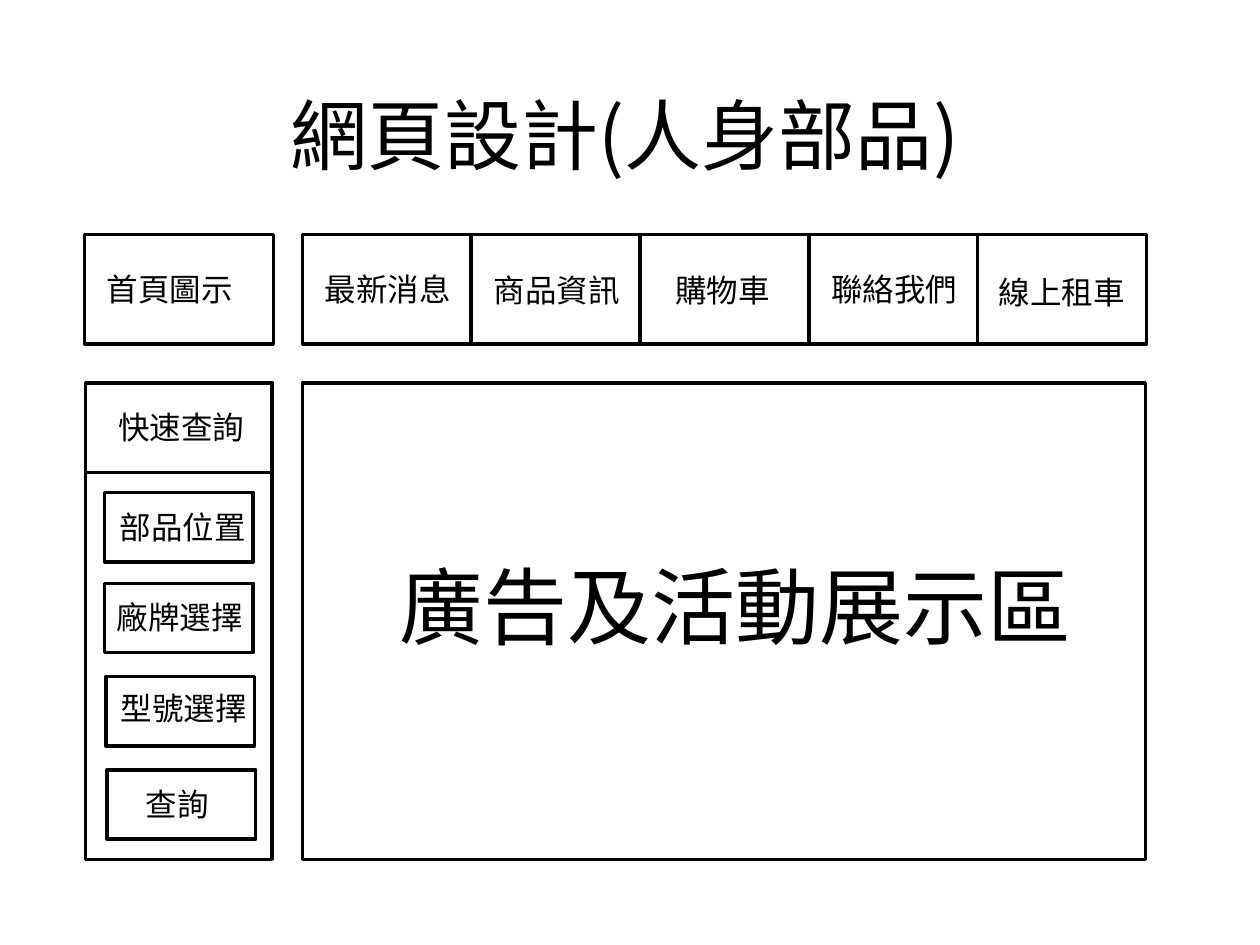
from dataclasses import dataclass

from pptx import Presentation
from pptx import util as u
from pptx.dml.color import RGBColor
from pptx.enum import shapes, text
from pptx.oxml import ns
from lxml import etree


@dataclass(frozen=True)
class Theme:
    """Colours, font and type sizes of the wireframe."""
    ink: RGBColor = RGBColor(0, 0, 0)
    paper: RGBColor = RGBColor(255, 255, 255)
    font: str = "Noto Sans CJK SC"
    title: int = 44
    banner: int = 48
    label: int = 18
    line: int = 2


class Wireframe:
    """Draws wireframe elements on a page, in a grid of 100 columns by 75 rows."""

    def __init__(self, deck, theme):
        """Open a title-only page with a plain background."""
        self.theme = theme
        self.cell = deck.slide_width / 100
        self.page = deck.slides.add_slide(deck.slide_layouts[5])
        self.page.background.fill.solid()
        self.page.background.fill.fore_color.rgb = theme.paper

    def place(self, *lengths):
        """Turn grid lengths into slide lengths."""
        return [u.Emu(round(length * self.cell)) for length in lengths]

    def set_text(self, frame, words, size, align):
        """Fill a text frame with one styled paragraph."""
        para = frame.paragraphs[0]
        para.text = words
        para.alignment = align
        para.font.name = self.theme.font
        para.font.size = u.Pt(size)
        para.font.color.rgb = self.theme.ink
        style = para._p.pPr.find(ns.qn("a:defRPr"))
        etree.SubElement(style, ns.qn("a:ea"), typeface=self.theme.font)

    def title(self, words, left, top, width, height):
        """Move and fill the title placeholder."""
        box = self.page.shapes.title
        box.left, box.top, box.width, box.height = self.place(left, top, width, height)
        box.text_frame.vertical_anchor = text.MSO_ANCHOR.MIDDLE
        box.text_frame.auto_size = text.MSO_AUTO_SIZE.NONE
        self.set_text(box.text_frame, words, self.theme.title, text.PP_ALIGN.CENTER)

    def box(self, left, top, width, height):
        """Draw an outlined rectangle."""
        box = self.page.shapes.add_shape(
            shapes.MSO_SHAPE.RECTANGLE, *self.place(left, top, width, height))
        box.shadow.inherit = False
        box.fill.background()
        box.line.color.rgb = self.theme.ink
        box.line.width = u.Pt(self.theme.line)

    def label(self, words, left, top, width, height=4, size=None):
        """Add a left-aligned line of text."""
        box = self.page.shapes.add_textbox(*self.place(left, top, width, height))
        box.text_frame.word_wrap = True
        box.text_frame.auto_size = text.MSO_AUTO_SIZE.SHAPE_TO_FIT_TEXT
        self.set_text(box.text_frame, words, size or self.theme.label, text.PP_ALIGN.LEFT)


def main():
    """Build the web page layout slide."""
    deck = Presentation()
    deck.slide_width, deck.slide_height = u.Inches(10), u.Inches(7.5)
    theme = Theme()
    frame = Wireframe(deck, theme)
    frame.title("網頁設計(人身部品)", 4.6, 4.4, 90, 12.5)

    frame.box(6.7, 18.6, 15, 8.7)
    frame.label("首頁圖示", 7.5, 20.9, 17.3)

    menu_left, menu_step = 24, 13.4
    menu = [("最新消息", 0.8, 20.9), ("商品資訊", 0.8, 21), ("購物車", 1.8, 21),
            ("聯絡我們", 0.8, 20.9), ("線上租車", 0.7, 21.2)]
    for column, (words, inset, top) in enumerate(menu):
        left = menu_left + column * menu_step
        frame.box(left, 18.6, menu_step, 8.7)
        frame.label(words, left + inset, top, 12.6)

    frame.box(menu_left, 30.4, 66.9, 37.8)
    frame.label("廣告及活動展示區", 30.7, 43.5, 59.8, 9.1, theme.banner)

    frame.box(6.8, 30.4, 14.8, 37.8)
    frame.box(6.8, 30.4, 14.8, 7.1)
    frame.label("快速查詢", 8.4, 31.9, 14.2)
    search = [("部品位置", 8.3, 39.1, 0.2, 0.7), ("廠牌選擇", 8.3, 46.3, 0, 0.7),
              ("型號選擇", 8.4, 53.7, 0.2, 0.5), ("查詢", 8.5, 61.1, 2.1, 0.7)]
    for words, left, top, inset, drop in search:
        frame.box(left, top, 11.8, 5.5)
        frame.label(words, left + inset, top + drop, 14.2)

    deck.save("out.pptx")


if __name__ == "__main__":
    main()
